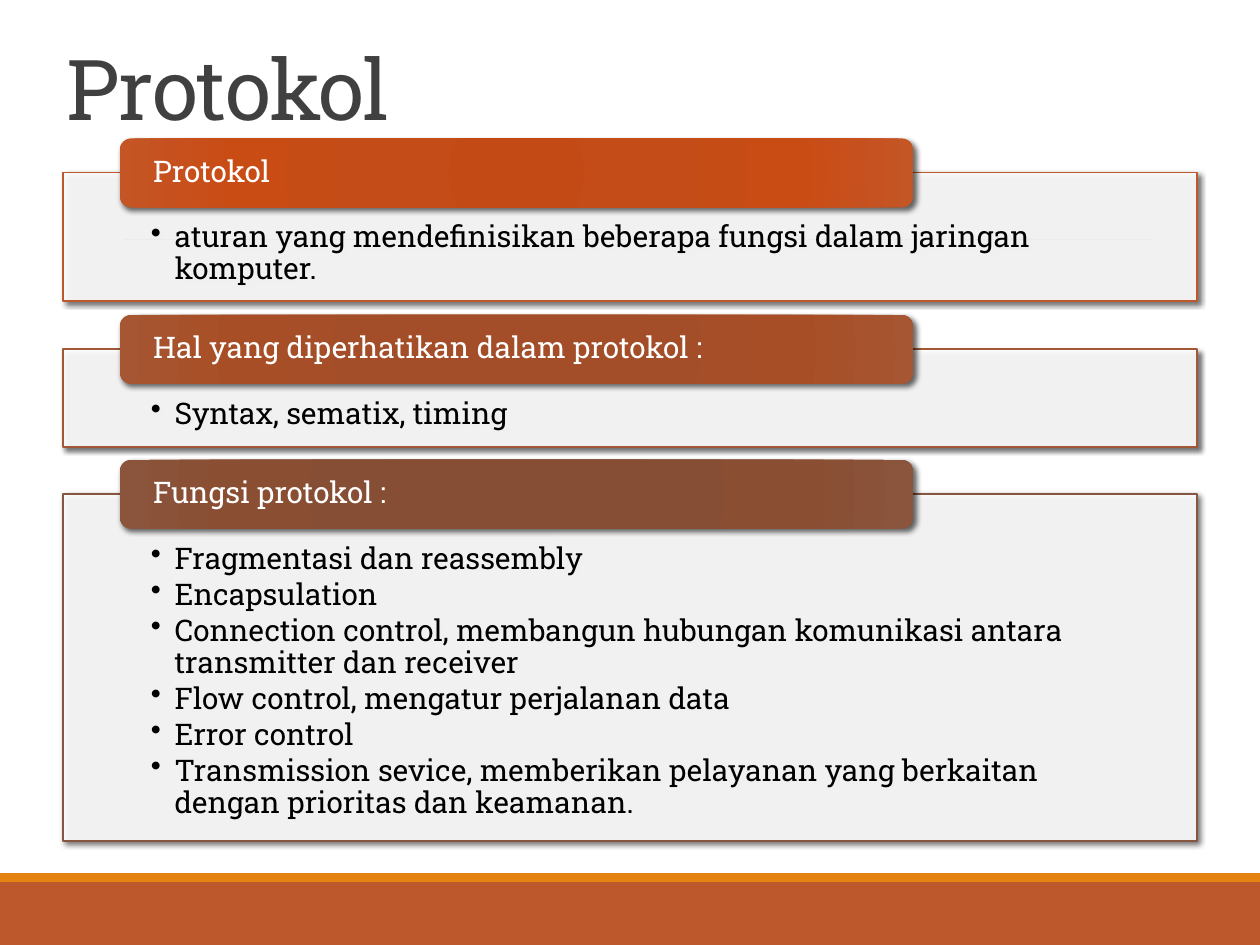
from lxml import etree
from pptx import Presentation
from pptx.dml.color import RGBColor
from pptx.enum.shapes import MSO_CONNECTOR as CONN, MSO_SHAPE as SHAPE
from pptx.enum.text import MSO_ANCHOR as ANCHOR, PP_ALIGN as ALIGN
from pptx.oxml import parse_xml
from pptx.oxml.ns import nsdecls, qn
from pptx.util import Pt

FONT = "Roboto Slab"
COLORS = {
    "title": "404040", "footer": "BD582C", "stripe": "E48312", "rule": "808080",
    "panel": "FFFFFF", "header_text": "FFFFFF", "body_text": "000000", "shadow": "000000",
}
STOPS = [0, 34, 70, 100]

# panel top, panel height, line colour, header gradient, heading, bullets
SECTIONS = [
    (98.6, 73.5, "BD582C", ["C44A15", "C34C18", "C94C15", "C45525"],
     "Protokol",
     ["aturan yang mendefinisikan beberapa fungsi dalam jaringan komputer."]),
    (199.4, 56, "A05837", ["A44C25", "A34E28", "A84E26", "A65632"],
     "Hal yang diperhatikan dalam protokol :",
     ["Syntax, sematix, timing"]),
    (282.2, 198.4, "865640", ["874C32", "864E34", "8A4E33", "8A553C"],
     "Fungsi protokol :",
     ["Fragmentasi dan reassembly",
      "Encapsulation",
      "Connection control, membangun hubungan komunikasi antara transmitter dan receiver",
      "Flow control, mengatur perjalanan data",
      "Error control",
      "Transmission sevice, memberikan pelayanan yang berkaitan dengan prioritas dan keamanan."]),
]


def add_box(kind, left, top, width, height, color):
    sp = slide.shapes.add_shape(kind, Pt(left), Pt(top), Pt(width), Pt(height))
    sp.shadow.inherit = False
    sp.fill.solid()
    sp.fill.fore_color.rgb = RGBColor.from_string(color)
    sp.line.fill.background()
    return sp


def add_shadow(sp):
    """Give the shape a soft shadow towards the lower right."""
    effects = sp._element.spPr.find(qn("a:effectLst"))
    effects.append(parse_xml(
        f'<a:outerShdw {nsdecls("a")} blurRad="{Pt(3)}" dist="{Pt(2)}" dir="2700000" '
        f'algn="tl" rotWithShape="0"><a:srgbClr val="{COLORS["shadow"]}">'
        '<a:alpha val="60000"/></a:srgbClr></a:outerShdw>'))


prs = Presentation()
prs.slide_width, prs.slide_height = Pt(720), Pt(540)
slide = prs.slides.add_slide(prs.slide_layouts[6])

# Footer bands and rule
add_box(SHAPE.RECTANGLE, 0, 504, 720, 36, COLORS["footer"])
add_box(SHAPE.RECTANGLE, 0, 499, 720, 5, COLORS["stripe"])
rule = slide.shapes.add_connector(CONN.STRAIGHT, Pt(70.6), Pt(136.8), Pt(658.8), Pt(136.8))
rule.line.color.rgb = RGBColor.from_string(COLORS["rule"])
rule.line.width = Pt(0.5)
etree.SubElement(rule._element.spPr, qn("a:effectLst"))

# Title
title = slide.shapes.add_textbox(Pt(31), Pt(9.4), Pt(648), Pt(72.7))
tf = title.text_frame
tf.word_wrap = True
tf.vertical_anchor = ANCHOR.BOTTOM
tf.text = "Protokol"
p = tf.paragraphs[0]
p.line_spacing = 0.85
r = p.runs[0]
r.font.name, r.font.size = FONT, Pt(48)
r.font.color.rgb = RGBColor.from_string(COLORS["title"])
r._r.get_or_add_rPr().set("spc", "-50")

# Panels with their headers
for top, height, line_color, gradient, heading, bullets in SECTIONS:
    panel = add_box(SHAPE.RECTANGLE, 36, top, 648, height, COLORS["panel"])
    panel_color = panel._element.spPr.find(qn("a:solidFill"))[0]
    etree.SubElement(panel_color, qn("a:alpha"), val="90000")
    panel.line.color.rgb = RGBColor.from_string(line_color)
    panel.line.width = Pt(1)
    add_shadow(panel)

    tf = panel.text_frame
    tf.word_wrap = True
    tf.vertical_anchor = ANCHOR.TOP
    tf.margin_left = tf.margin_right = Pt(50.3)
    tf.margin_top, tf.margin_bottom = Pt(28.3), Pt(9.5)
    tf.text = "\n".join(bullets)
    for p in tf.paragraphs:
        p.alignment = ALIGN.LEFT
        p.line_spacing = 0.9
        p.space_after = Pt(2.2)
        pPr = p._p.get_or_add_pPr()
        pPr.set("marL", str(Pt(13.5)))
        pPr.set("indent", str(Pt(-13.5)))
        etree.SubElement(pPr, qn("a:buChar"), char="•")
        font = p.runs[0].font
        font.name, font.size = FONT, Pt(17)
        font.color.rgb = RGBColor.from_string(COLORS["body_text"])

    header = add_box(SHAPE.ROUNDED_RECTANGLE, 68.4, top - 19.5, 453.6, 39.5, gradient[0])
    stops = "".join(f'<a:gs pos="{pos * 1000}"><a:srgbClr val="{color}"/></a:gs>'
                    for pos, color in zip(STOPS, gradient))
    spPr = header._element.spPr
    spPr.replace(spPr.find(qn("a:solidFill")), parse_xml(
        f'<a:gradFill {nsdecls("a")} rotWithShape="1"><a:gsLst>{stops}</a:gsLst>'
        '<a:path path="circle"><a:fillToRect l="100000" t="100000" r="100000" b="100000"/>'
        '</a:path></a:gradFill>'))
    add_shadow(header)

    tf = header.text_frame
    tf.word_wrap = True
    tf.vertical_anchor = ANCHOR.MIDDLE
    tf.margin_left = tf.margin_right = Pt(17.2)
    tf.margin_top = tf.margin_bottom = 0
    tf.text = heading
    p = tf.paragraphs[0]
    p.alignment = ALIGN.LEFT
    p.line_spacing = 0.9
    font = p.runs[0].font
    font.name, font.size = FONT, Pt(17)
    font.color.rgb = RGBColor.from_string(COLORS["header_text"])

prs.save("out.pptx")
